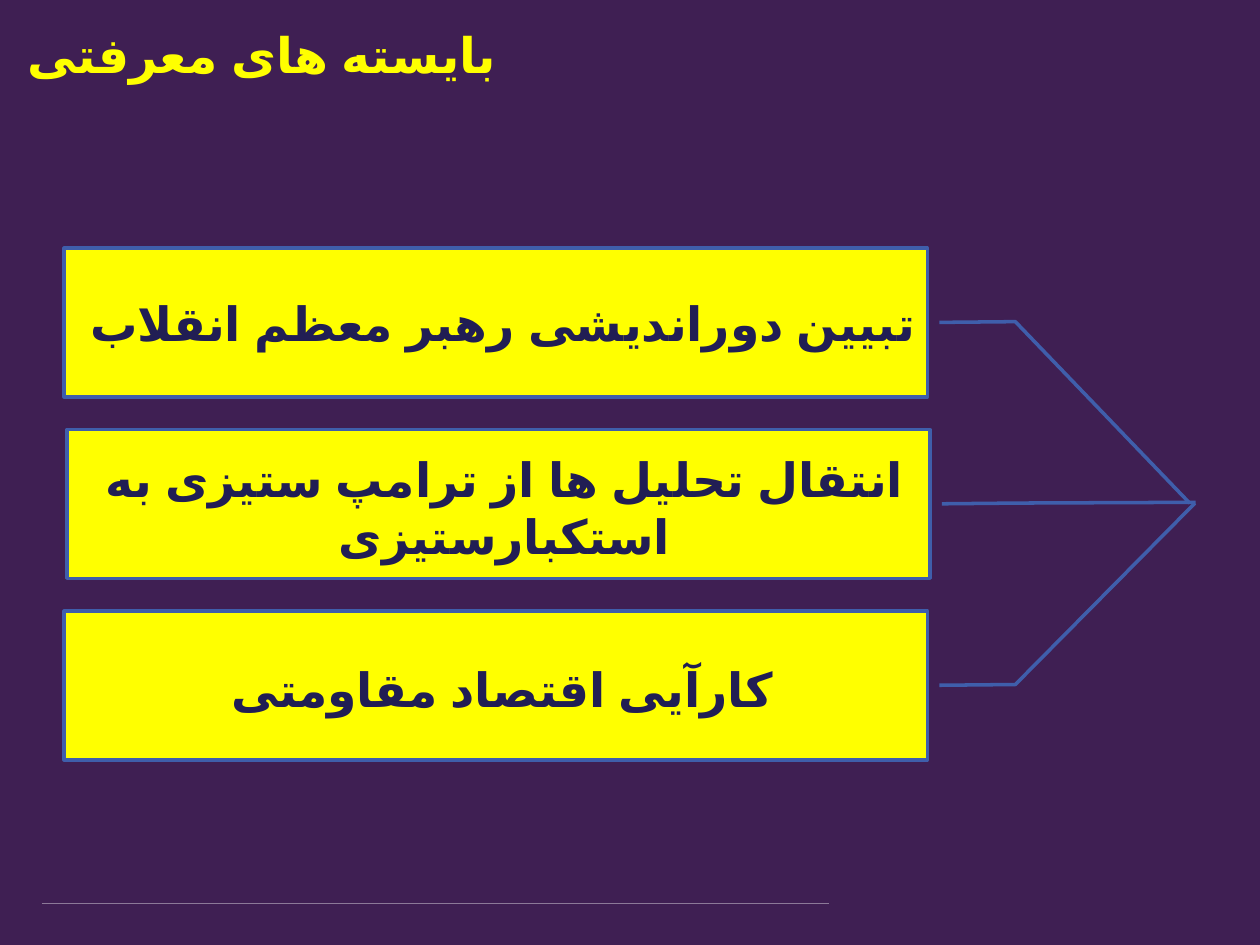
from lxml import etree
from pptx import Presentation
from pptx.dml.color import RGBColor
from pptx.enum import shapes, text
from pptx.oxml.ns import qn
from pptx.util import Inches, Pt

TITLE = "بایسته های معرفتی"
RIGHT, CENTER, LEFT = text.PP_ALIGN.RIGHT, text.PP_ALIGN.CENTER, text.PP_ALIGN.LEFT
TIGHT = {"margin_right": 0, "margin_bottom": 0}
CALLOUTS = [
    {"words": "تبیین دوراندیشی رهبر معظم انقلاب", "left": 0.51,
     "align": RIGHT, "margins": {}, "tip": (1.715, 1.304)},
    {"words": "انتقال تحلیل ها از ترامپ ستیزی به استکبارستیزی", "left": 0.53,
     "align": CENTER, "margins": TIGHT, "tip": (0.489, 1.308)},
    {"words": "کارآیی اقتصاد مقاومتی", "left": 0.51,
     "align": CENTER, "margins": TIGHT, "tip": (-0.726, 1.31)},
]
ELBOW = (0.499, 1.014, 0.494, 1.102)
TOP, STEP, WIDTH, HEIGHT = 1.97, 1.44, 6.85, 1.18
PURPLE, YELLOW, NAVY, BLUE, MAUVE = "3F1F53", "FFFF00", "211E54", "3F5EAB", "8C7998"


def color(value):
    return RGBColor.from_string(value)


def write(frame, words, align, size, ink, **margins):
    settings = {"word_wrap": True, "vertical_anchor": text.MSO_ANCHOR.MIDDLE, **margins}
    for name, value in settings.items():
        setattr(frame, name, value)
    para = frame.paragraphs[0]
    para.alignment = align
    para._p.get_or_add_pPr().set("rtl", "1")
    span = para.add_run()
    span.text = words
    for name, value in {"name": "Arial", "size": Pt(size), "bold": True}.items():
        setattr(span.font, name, value)
    span.font.color.rgb = color(ink)
    span._r.get_or_add_rPr().set("lang", "fa-IR")


def stroke(line, ink, width):
    line.color.rgb = color(ink)
    line.width = Pt(width)


def add_callout(page, index, item):
    box = page.shapes.add_shape(
        shapes.MSO_SHAPE.LINE_CALLOUT_2, Inches(item["left"]),
        Inches(TOP + index * STEP), Inches(WIDTH), Inches(HEIGHT))
    for position, value in enumerate(ELBOW + item["tip"]):
        box.adjustments[position] = value
    box.shadow.inherit = False
    box.fill.solid()
    box.fill.fore_color.rgb = color(YELLOW)
    stroke(box.line, BLUE, 2)
    write(box.text_frame, item["words"], item["align"], 27, NAVY, **item["margins"])


def main():
    deck = Presentation()
    deck.slide_width, deck.slide_height = Inches(10), Inches(7.5)
    page = deck.slides.add_slide(deck.slide_layouts[5])
    page.background.fill.solid()
    page.background.fill.fore_color.rgb = color(PURPLE)

    rule = page.shapes.add_connector(
        shapes.MSO_CONNECTOR.STRAIGHT, Inches(0.33), Inches(7.17), Inches(6.58), Inches(7.17))
    stroke(rule.line, MAUVE, 0.5)
    etree.SubElement(rule._element.spPr, qn("a:effectLst"))

    title = page.shapes.title
    place = {"left": 0.12, "top": 0.18, "width": 7.56, "height": 0.5}
    for name, value in place.items():
        setattr(title, name, Inches(value))
    write(title.text_frame, TITLE, LEFT, 28, YELLOW)

    for index, item in enumerate(CALLOUTS):
        add_callout(page, index, item)
    deck.save("out.pptx")


if __name__ == "__main__":
    main()
